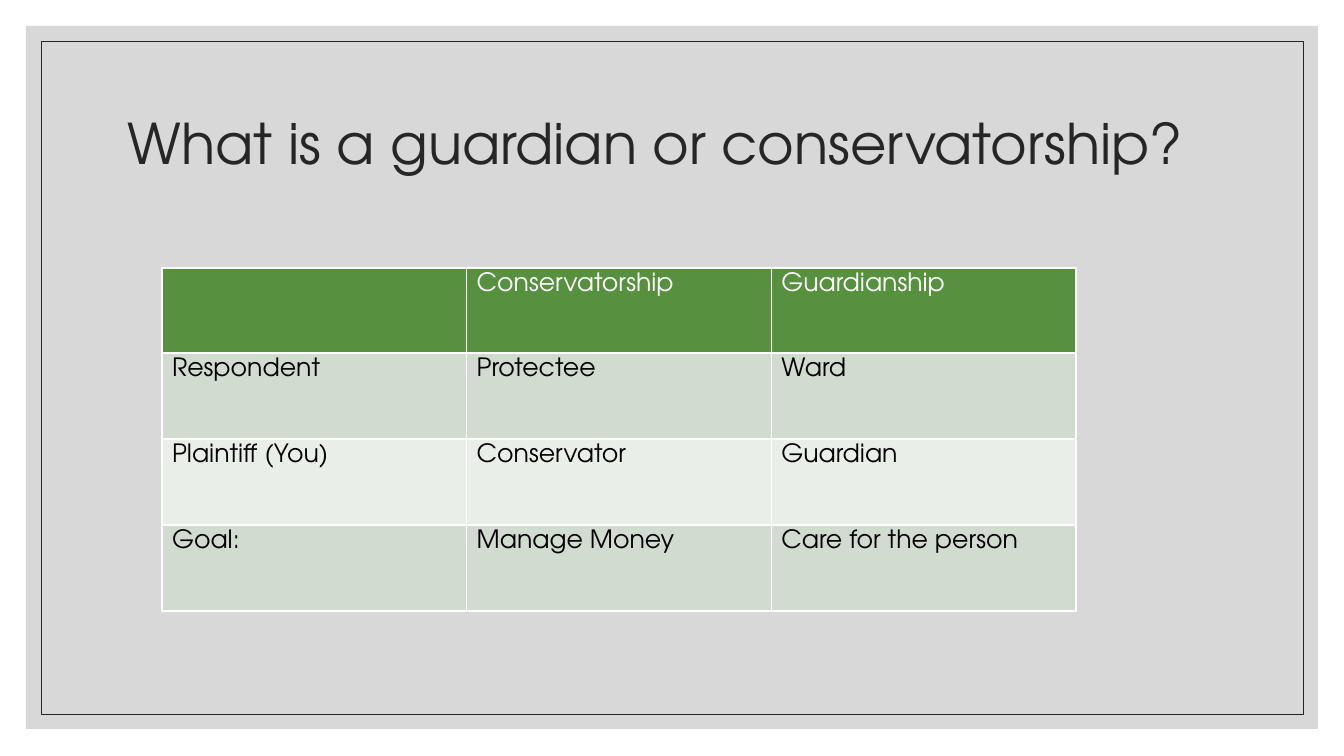
import pptx
import pptx.util
import pptx.dml.color
import pptx.enum.shapes
import pptx.enum.text
import pptx.oxml
import pptx.oxml.ns

PX = 914400 / 100.8
FONT = "TeX Gyre Adventor"
COLORS = {
    "panel": "BFBFBF", "ink": "262626", "white": "FFFFFF", "black": "000000",
    "header": "57903F", "band": "D1DBCF", "light": "EAEEE8",
}
ROWS = [
    ["", "Conservatorship", "Guardianship"],
    ["Respondent", "Protectee", "Ward"],
    ["Plaintiff (You)", "Conservator", "Guardian"],
    ["Goal:", "Manage Money", "Care for the person"],
]


def px(n):
    return pptx.util.Emu(round(n * PX))


def rgb(name):
    return pptx.dml.color.RGBColor.from_string(COLORS[name])


def set_attrs(obj, values):
    for name, value in values.items():
        setattr(obj, name, value)


def add_text(p, text, size, color):
    r = p.add_run()
    r.text = text
    set_attrs(r.font, {"name": FONT, "size": pptx.util.Pt(size), "bold": False})
    r.font.color.rgb = rgb(color)


def add_rect(slide, x, y, w, h):
    sp = slide.shapes.add_shape(
        pptx.enum.shapes.MSO_SHAPE.RECTANGLE, px(x), px(y), px(w), px(h))
    sp.shadow.inherit = False
    return sp


def add_frame(slide, x, y, w, h):
    panel = add_rect(slide, x, y, w, h)
    panel.fill.solid()
    panel.fill.fore_color.rgb = rgb("panel")
    panel.line.fill.background()
    clr = panel.fill._xPr.find(".//" + pptx.oxml.ns.qn("a:srgbClr"))
    clr.append(pptx.oxml.parse_xml(
        f'<a:alpha {pptx.oxml.ns.nsdecls("a")} val="60000"/>'))

    inset = 15
    border = add_rect(slide, x + inset, y + inset, w - 2 * inset, h - 2 * inset)
    border.fill.background()
    border.line.color.rgb = rgb("ink")
    border.line.width = pptx.util.Pt(0.5)


def add_title(slide, x, y, w, h):
    tf = slide.shapes.add_textbox(px(x), px(y), px(w), px(h)).text_frame
    set_attrs(tf, {
        "word_wrap": True,
        "vertical_anchor": pptx.enum.text.MSO_ANCHOR.MIDDLE,
    })
    p = tf.paragraphs[0]
    p.line_spacing = 0.9
    add_text(p, "What is a guardian or conservatorship?", 40, "ink")


def add_borders(cell):
    tcPr = cell._tc.get_or_add_tcPr()
    for i, side in enumerate("LRTB"):
        tcPr.insert(i, pptx.oxml.parse_xml(
            f'<a:ln{side} {pptx.oxml.ns.nsdecls("a")} w="{pptx.util.Pt(1)}">'
            f'<a:solidFill><a:srgbClr val="{COLORS["white"]}"/></a:solidFill>'
            f'</a:ln{side}>'))


def add_roles_table(slide, x, y, w, h):
    table = slide.shapes.add_table(
        len(ROWS), len(ROWS[0]), px(x), px(y), px(w), px(h)).table
    header_h = 85
    row_h = (h - header_h) / (len(ROWS) - 1)
    for col in table.columns:
        col.width = px(w / len(ROWS[0]))
    for i, texts in enumerate(ROWS):
        table.rows[i].height = px(row_h if i else header_h)
        fill = "header" if i == 0 else "band" if i % 2 else "light"
        for j, text in enumerate(texts):
            cell = table.cell(i, j)
            cell.fill.solid()
            cell.fill.fore_color.rgb = rgb(fill)
            add_borders(cell)
            if text:
                add_text(cell.text_frame.paragraphs[0], text, 18,
                         "black" if i else "white")


def main():
    prs = pptx.Presentation()
    set_attrs(prs, {"slide_width": px(1344), "slide_height": px(756)})
    slide = prs.slides.add_slide(prs.slide_layouts[6])
    add_frame(slide, 26, 26, 1292, 703)
    add_title(slide, 118, 71, 1109, 151)
    add_roles_table(slide, 162, 268, 914, 343)
    prs.save("out.pptx")


if __name__ == "__main__":
    main()
